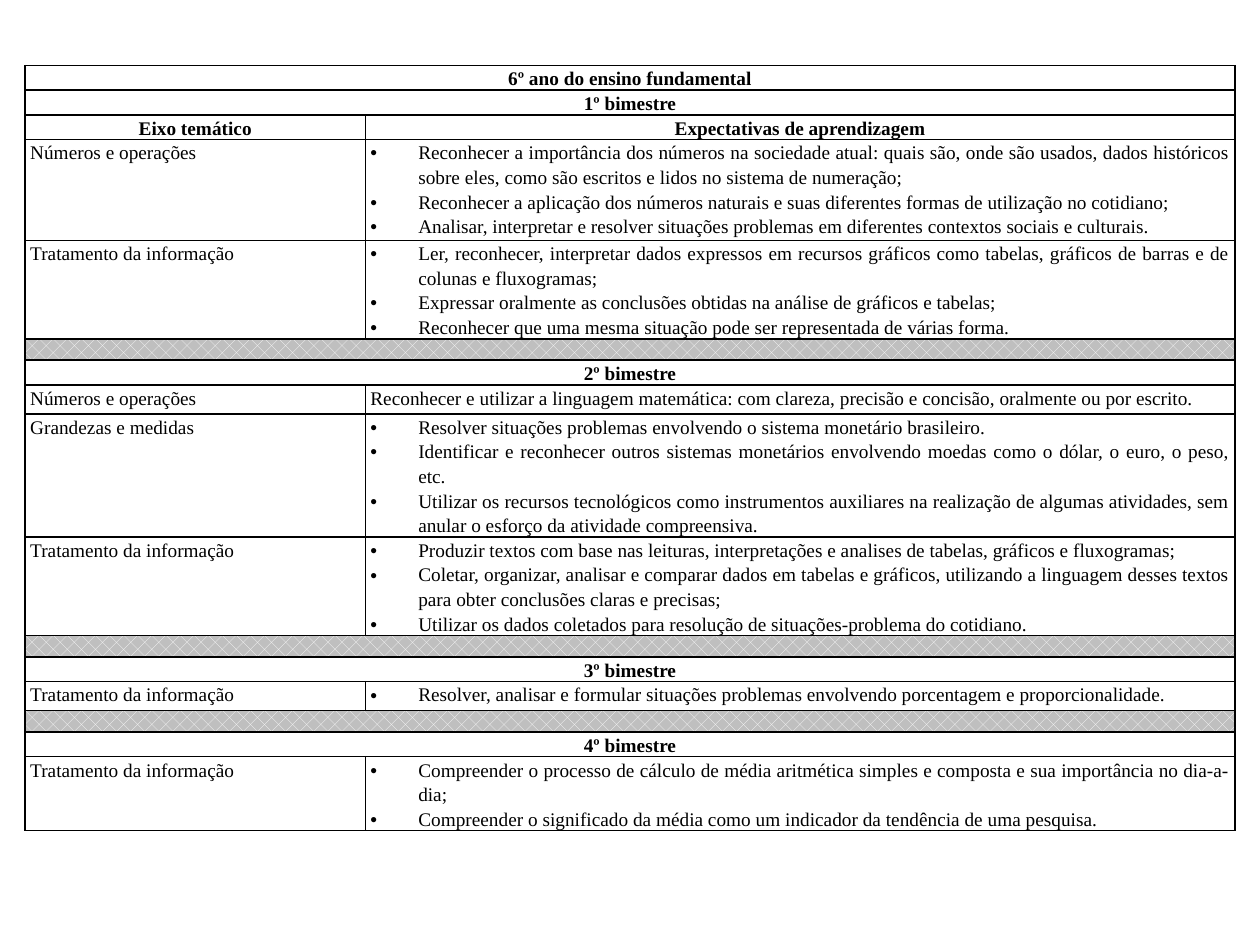
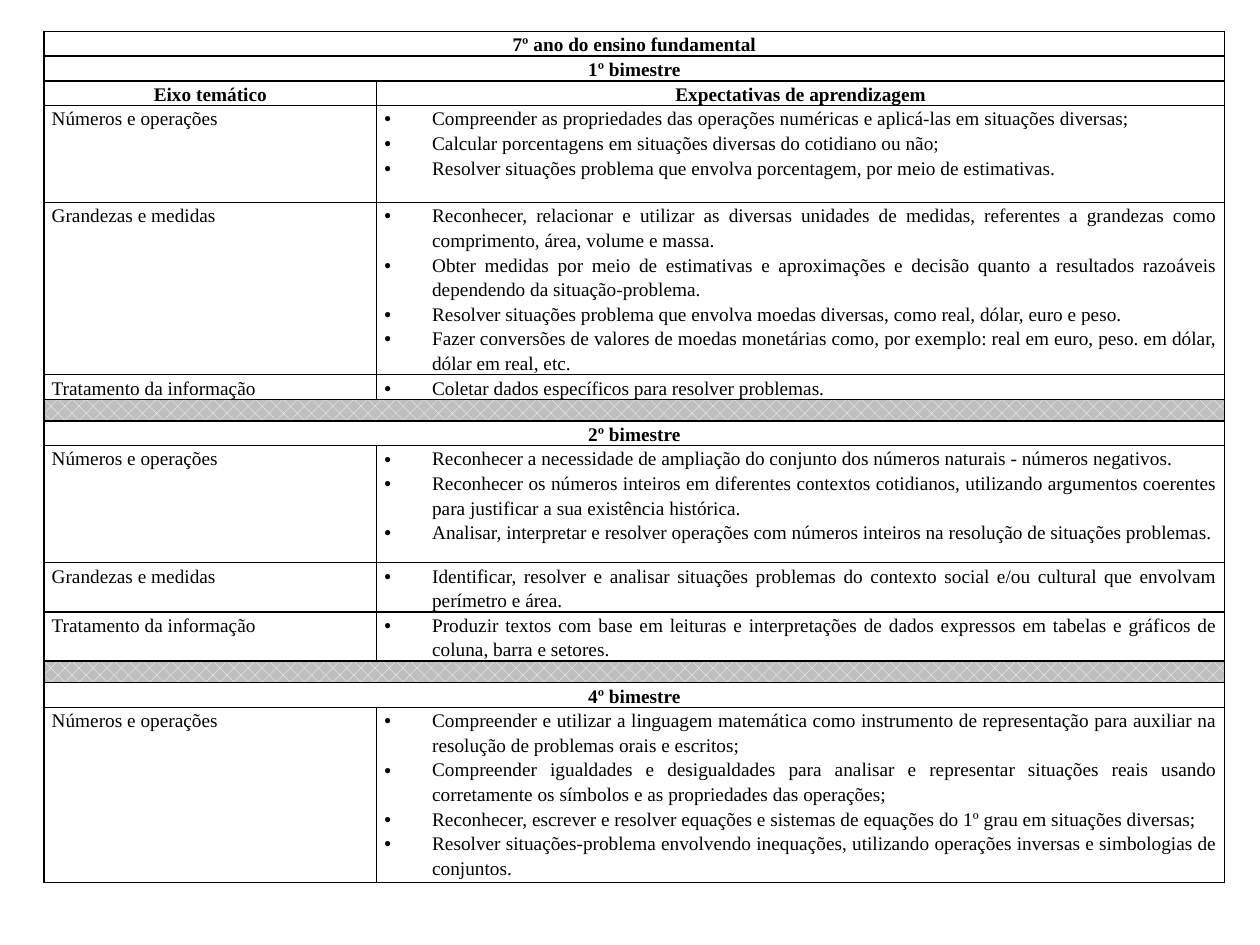
import pptx
import pptx.dml.color
import pptx.enum.dml
import pptx.enum.text
import pptx.oxml
import pptx.oxml.ns
import pptx.util
from lxml import etree

Inches = pptx.util.Inches
Pt = pptx.util.Pt
RGBColor = pptx.dml.color.RGBColor
Align = pptx.enum.text.PP_ALIGN
qn = pptx.oxml.ns.qn

BLACK = RGBColor(0x00, 0x00, 0x00)
WHITE = RGBColor(0xFF, 0xFF, 0xFF)
GREY = RGBColor(0xBF, 0xBF, 0xBF)

NUMBERS = "Números e operações"
MEASURES = "Grandezas e medidas"
DATA = "Tratamento da informação"
COLUMN_HEADS = ("Eixo temático", "Expectativas de aprendizagem")
BAND = ()

# Each row is (least height, cells): no cells make a grey band, one a heading
# across the table, two a theme with its text or its list of expectations.
YEAR_6 = [
    (0.11, ("6º ano do ensino fundamental",)),
    (0.11, ("1º bimestre",)),
    (0.11, COLUMN_HEADS),
    (0.8, (NUMBERS, [
        "Reconhecer a importância dos números na sociedade atual: quais são, onde são usados, "
        "dados históricos sobre eles, como são escritos e lidos no sistema de numeração;",
        "Reconhecer a aplicação dos números naturais e suas diferentes formas de utilização no cotidiano;",
        "Analisar, interpretar e resolver situações problemas em diferentes contextos sociais e culturais.",
    ])),
    (0.46, (DATA, [
        "Ler, reconhecer, interpretar dados expressos em recursos gráficos como tabelas, "
        "gráficos de barras e de colunas e fluxogramas;",
        "Expressar oralmente as conclusões obtidas na análise de gráficos e tabelas;",
        "Reconhecer que uma mesma situação pode ser representada de várias forma.",
    ])),
    (0.11, BAND),
    (0.11, ("2º bimestre",)),
    (0.23, (NUMBERS, "Reconhecer e utilizar a linguagem matemática: com clareza, precisão e "
                     "concisão, oralmente ou por escrito.")),
    (0.57, (MEASURES, [
        "Resolver situações problemas envolvendo o sistema monetário brasileiro.",
        "Identificar e reconhecer outros sistemas monetários envolvendo moedas como o dólar, "
        "o euro, o peso, etc.",
        "Utilizar os recursos tecnológicos como instrumentos auxiliares na realização de algumas "
        "atividades, sem anular o esforço da atividade compreensiva.",
    ])),
    (0.68, (DATA, [
        "Produzir textos com base nas leituras, interpretações e analises de tabelas, gráficos e fluxogramas;",
        "Coletar, organizar, analisar e comparar dados em tabelas e gráficos, utilizando a "
        "linguagem desses textos para obter conclusões claras e precisas;",
        "Utilizar os dados coletados para resolução de situações-problema do cotidiano.",
    ])),
    (0.11, BAND),
    (0.11, ("3º bimestre",)),
    (0.23, (DATA, [
        "Resolver, analisar e formular situações problemas envolvendo porcentagem e proporcionalidade.",
    ])),
    (0.11, BAND),
    (0.11, ("4º bimestre",)),
    (0.46, (DATA, [
        "Compreender o processo de cálculo de média aritmética simples e composta e sua "
        "importância no dia-a-dia;",
        "Compreender o significado da média como um indicador da tendência de uma pesquisa.",
    ])),
]

YEAR_7 = [
    (0.16, ("7º ano do ensino fundamental",)),
    (0.16, ("1º bimestre",)),
    (0.16, COLUMN_HEADS),
    (0.77, (NUMBERS, [
        "Compreender as propriedades das operações numéricas e aplicá-las em situações diversas;",
        "Calcular porcentagens em situações diversas do cotidiano ou não;",
        "Resolver situações problema que envolva porcentagem, por meio de estimativas.",
    ])),
    (1.24, (MEASURES, [
        "Reconhecer, relacionar e utilizar as diversas unidades de medidas, referentes a "
        "grandezas como comprimento, área, volume e massa.",
        "Obter medidas por meio de estimativas e aproximações e decisão quanto a resultados "
        "razoáveis dependendo da situação-problema.",
        "Resolver situações problema que envolva moedas diversas, como real, dólar, euro e peso.",
        "Fazer conversões de valores de moedas monetárias como, por exemplo: real em euro, "
        "peso. em dólar, dólar em real, etc.",
    ])),
    (0.16, (DATA, ["Coletar dados específicos para resolver problemas."])),
    (0.16, BAND),
    (0.16, ("2º bimestre",)),
    (0.93, (NUMBERS, [
        "Reconhecer a necessidade de ampliação do conjunto dos números naturais - números negativos.",
        "Reconhecer os números inteiros em diferentes contextos cotidianos, utilizando "
        "argumentos coerentes para justificar a sua existência histórica.",
        "Analisar, interpretar e resolver operações com números inteiros na resolução de "
        "situações problemas.",
    ])),
    (0.31, (MEASURES, [
        "Identificar, resolver e analisar situações problemas do contexto social e/ou cultural "
        "que envolvam perímetro e área.",
    ])),
    (0.31, (DATA, [
        "Produzir textos com base em leituras e interpretações de dados expressos em tabelas e "
        "gráficos de coluna, barra e setores.",
    ])),
    (0.16, BAND),
    (0.16, ("4º bimestre",)),
    (1.39, (NUMBERS, [
        "Compreender e utilizar a linguagem matemática como instrumento de representação para "
        "auxiliar na resolução de problemas orais e escritos;",
        "Compreender igualdades e desigualdades para analisar e representar situações reais "
        "usando corretamente os símbolos e as propriedades das operações;",
        "Reconhecer, escrever e resolver equações e sistemas de equações do 1º grau em situações diversas;",
        "Resolver situações-problema envolvendo inequações, utilizando operações inversas e "
        "simbologias de conjuntos.",
    ])),
]


class CurriculumDeck:
    """Holds the shared table style and the current slide."""

    font = "Times New Roman"
    size = Pt(11)
    line_spacing = 1.15
    indent = Inches(0.38)
    border = Pt(1)

    def __init__(self):
        self.prs = pptx.Presentation()
        self.prs.slide_width = Inches(10)
        self.prs.slide_height = Inches(7.5)
        self.s = None

    def new_slide(self):
        self.s = self.prs.slides.add_slide(self.prs.slide_layouts[6])

    def style_font(self, font, bold=False):
        font.name = self.font
        font.size = self.size
        font.bold = bold
        font.color.rgb = BLACK

    def add_bullet(self, p):
        pPr = p._p.get_or_add_pPr()
        pPr.set("marL", str(self.indent))
        pPr.set("indent", str(-self.indent))
        etree.SubElement(pPr, qn("a:buFont")).set("typeface", "Arial")
        etree.SubElement(pPr, qn("a:buChar")).set("char", "•")

    def add_cell_text(self, cell, content, heading):
        """Fill a cell with plain text, or with bullets if content is a list."""
        bulleted = isinstance(content, list)
        tf = cell.text_frame
        for i, text in enumerate(content if bulleted else [content]):
            p = tf.add_paragraph() if i else tf.paragraphs[0]
            p.alignment = Align.CENTER if heading else Align.JUSTIFY
            p.line_spacing = self.line_spacing
            if bulleted:
                self.add_bullet(p)
            r = p.add_run()
            r.text = text
            self.style_font(r.font, heading)

    def style_cell(self, cell, inset):
        cell.margin_left = cell.margin_right = inset
        cell.margin_top = cell.margin_bottom = 0
        tcPr = cell._tc.get_or_add_tcPr()
        for side in ("lnL", "lnR", "lnT", "lnB"):
            ln = etree.SubElement(tcPr, qn(f"a:{side}"), w=str(self.border))
            fill = etree.SubElement(ln, qn("a:solidFill"))
            etree.SubElement(fill, qn("a:srgbClr"), val=str(BLACK))
        cell.fill.background()

    def shade_band(self, cell):
        cell.fill.patterned()
        cell.fill.pattern = pptx.enum.dml.MSO_PATTERN.PERCENT_25
        cell.fill.fore_color.rgb = WHITE
        cell.fill.back_color.rgb = GREY
        p = cell.text_frame.paragraphs[0]
        end = etree.SubElement(p._p, qn("a:endParaRPr"), sz=str(int(self.size.pt * 100)))
        etree.SubElement(end, qn("a:latin"), typeface=self.font)

    def add_curriculum(self, rows, left, top, height, widths, inset):
        frame = self.s.shapes.add_table(len(rows), len(widths), Inches(left), Inches(top),
                                        Inches(sum(widths)), Inches(height))
        table = frame.table
        table.first_row = table.horz_banding = False
        for column, width in zip(table.columns, widths):
            column.width = Inches(width)
        for i, (row_height, contents) in enumerate(rows):
            table.rows[i].height = Inches(row_height)
            cells = list(table.rows[i].cells)
            for cell in cells:
                self.style_cell(cell, Inches(inset))
            if len(contents) < len(cells):
                cells[0].merge(cells[-1])
            if contents == BAND:
                self.shade_band(cells[0])
            heading = len(contents) == 1 or contents == COLUMN_HEADS
            for cell, content in zip(cells, contents):
                self.add_cell_text(cell, content, heading)
        frame.height = Inches(height)


def main():
    deck = CurriculumDeck()
    deck.new_slide()
    deck.add_curriculum(YEAR_6, 0.2, 0.52, 6.57, (2.7, 6.9), inset=0.04)
    deck.new_slide()
    deck.add_curriculum(YEAR_7, 0.35, 0.25, 7.18, (2.64, 6.73), inset=0.06)
    deck.prs.save("out.pptx")


if __name__ == "__main__":
    main()
